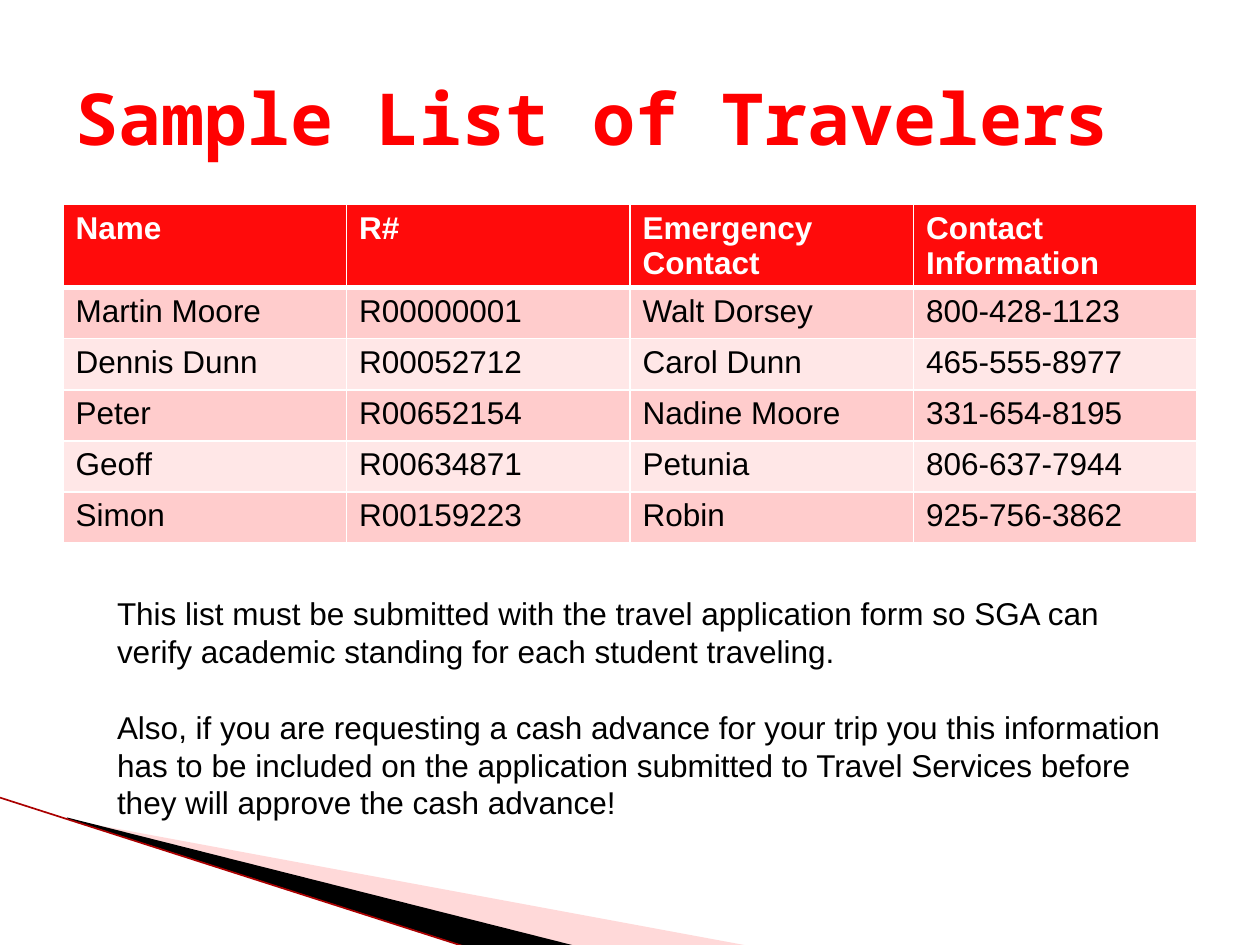
from lxml.etree import SubElement
from pptx import Presentation
from pptx.dml.color import RGBColor
from pptx.enum.text import MSO_ANCHOR, MSO_AUTO_SIZE, PP_ALIGN
from pptx.enum.shapes import MSO_CONNECTOR
from pptx.oxml.ns import qn
from pptx.util import Cm, Pt

RED = RGBColor(0xFF, 0x00, 0x00)
HEADER_RED = RGBColor(0xFF, 0x0B, 0x0B)
DARK_RED = RGBColor(0xAA, 0x00, 0x00)
WEDGE_PINK = RGBColor(0xFF, 0xA2, 0xA2)
BAND_DARK = RGBColor(0xFF, 0xCC, 0xCC)
BAND_LIGHT = RGBColor(0xFF, 0xE7, 0xE7)
BLACK = RGBColor(0x00, 0x00, 0x00)
WHITE = RGBColor(0xFF, 0xFF, 0xFF)

TITLE_FONT = "Noto Sans Mono"
BODY_FONT = "Arial"
NOTE_LINE = Pt(21.6)

TRAVELERS = [
    ("Name", "R#", "Emergency Contact", "Contact Information"),
    ("Martin Moore", "R00000001", "Walt Dorsey", "800-428-1123"),
    ("Dennis Dunn", "R00052712", "Carol Dunn", "465-555-8977"),
    ("Peter", "R00652154", "Nadine Moore", "331-654-8195"),
    ("Geoff", "R00634871", "Petunia", "806-637-7944"),
    ("Simon", "R00159223", "Robin", "925-756-3862"),
]
NOTES = [
    "This list must be submitted with the travel application form so SGA can "
    "verify academic standing for each student traveling.",
    "Also, if you are requesting a cash advance for your trip you this "
    "information has to be included on the application submitted to Travel "
    "Services before they will approve the cash advance!",
]


def style_font(font, name, size, color, bold=False):
    font.name = name
    font.size = Pt(size)
    font.bold = bold
    font.color.rgb = color


def add_wedge(slide, left, top, points, color):
    corners = [(left + Cm(x), top + Cm(y)) for x, y in points]
    builder = slide.shapes.build_freeform(*corners[0])
    builder.add_line_segments(corners[1:])
    wedge = builder.convert_to_shape()
    wedge.shadow.inherit = False
    wedge.fill.solid()
    wedge.fill.fore_color.rgb = color
    wedge.line.fill.background()
    return wedge


def add_corner_sweep(slide, left, top):
    # Translucent pink wedge
    pink = add_wedge(slide, left, top,
                     [(1.4, 0.45), (15.11, 2.99), (11.58, 2.99), (1.4, 0.43)],
                     WEDGE_PINK)
    pink_color = pink.fill._xPr.find(qn("a:solidFill"))[0]
    SubElement(pink_color, qn("a:alpha"), val="40000")

    # Black wedge
    add_wedge(slide, left, top,
              [(1.35, 0.4), (11.61, 2.99), (9.45, 3.02), (1.37, 0.43)], BLACK)

    # Thin edge line
    edge = slide.shapes.add_connector(MSO_CONNECTOR.STRAIGHT, left, top,
                                      left + Cm(9.42), top + Cm(3.02))
    edge.line.color.rgb = DARK_RED
    edge.line.width = Pt(0.95)
    SubElement(edge._element.spPr, qn("a:effectLst"))


def add_title(slide, left, top, width, height):
    title = slide.shapes.title
    title.left, title.top, title.width, title.height = left, top, width, height
    frame = title.text_frame
    frame.text = "Sample List of Travelers"
    frame.vertical_anchor = MSO_ANCHOR.MIDDLE
    heading = frame.paragraphs[0]
    heading.alignment = PP_ALIGN.LEFT
    style_font(heading.runs[0].font, TITLE_FONT, 41, RED, bold=True)


def set_borders(cell, bottom_width, top_width):
    widths = {"a:lnL": 1, "a:lnR": 1, "a:lnT": top_width, "a:lnB": bottom_width}
    properties = cell._tc.get_or_add_tcPr()
    for side, width in widths.items():
        border = SubElement(properties, qn(side), w=str(Pt(width)))
        fill = SubElement(border, qn("a:solidFill"))
        SubElement(fill, qn("a:srgbClr"), val=str(WHITE))


def add_traveler_table(slide, left, top, width, header_height, row_height):
    row_count, column_count = len(TRAVELERS), len(TRAVELERS[0])
    height = header_height + row_height * (row_count - 1)
    table = slide.shapes.add_table(row_count, column_count,
                                   left, top, width, height).table
    for column in table.columns:
        column.width = width // column_count

    for r, traveler in enumerate(TRAVELERS):
        is_header = r == 0
        table.rows[r].height = header_height if is_header else row_height
        band = HEADER_RED if is_header else (BAND_DARK if r % 2 else BAND_LIGHT)
        for c, entry in enumerate(traveler):
            cell = table.cell(r, c)
            set_borders(cell, bottom_width=3 if is_header else 1,
                        top_width=3 if r == 1 else 1)
            cell.fill.solid()
            cell.fill.fore_color.rgb = band
            cell.text_frame.text = entry
            style_font(cell.text_frame.paragraphs[0].runs[0].font, BODY_FONT, 18,
                       WHITE if is_header else BLACK, bold=is_header)


def add_notes_text(slide, left, top, width, height):
    frame = slide.shapes.add_textbox(left, top, width, height).text_frame
    frame.word_wrap = True
    frame.auto_size = MSO_AUTO_SIZE.SHAPE_TO_FIT_TEXT
    for i, note in enumerate(NOTES):
        paragraph = frame.add_paragraph() if i else frame.paragraphs[0]
        paragraph.text = note
        paragraph.line_spacing = NOTE_LINE
        if i:
            paragraph.space_before = NOTE_LINE
        style_font(paragraph.runs[0].font, BODY_FONT, 18, BLACK)


def main():
    deck = Presentation()
    deck.slide_width, deck.slide_height = Cm(25.4), Cm(19.05)
    slide = deck.slides.add_slide(deck.slide_layouts[5])

    add_corner_sweep(slide, Cm(0), Cm(16.08))
    add_traveler_table(slide, Cm(1.27), Cm(4.12), Cm(22.86), Cm(1.66), Cm(1.03))
    add_title(slide, Cm(1.27), Cm(0.76), Cm(22.86), Cm(3.18))
    add_notes_text(slide, Cm(2.11), Cm(11.86), Cm(21.79), Cm(4.88))

    deck.save("out.pptx")


if __name__ == "__main__":
    main()
